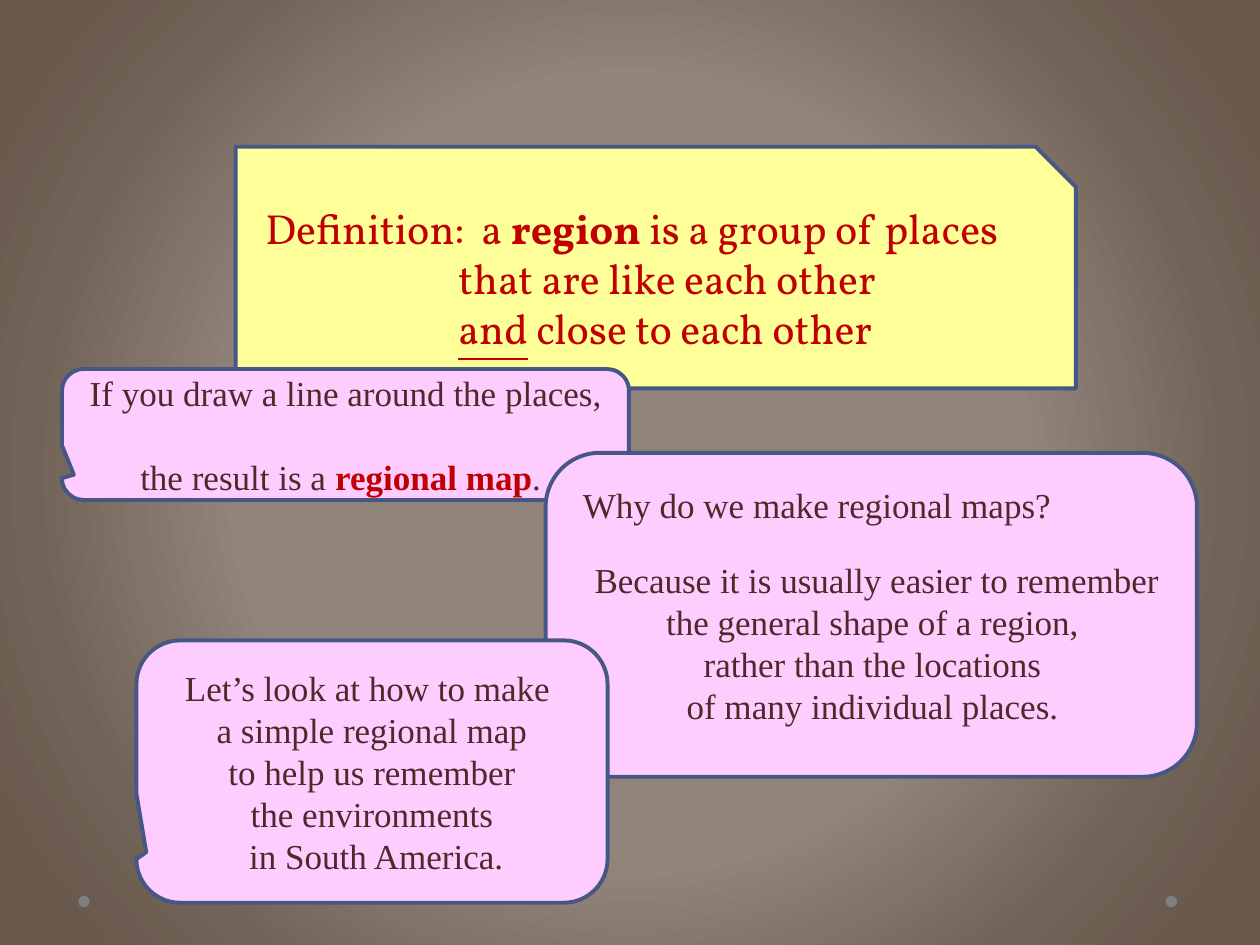
"""Build the slide that defines a region and a regional map."""
from lxml import etree
from pptx import Presentation
from pptx.dml.color import RGBColor
from pptx.enum.shapes import MSO_SHAPE
from pptx.enum.text import MSO_ANCHOR, PP_ALIGN
from pptx.oxml import parse_xml
from pptx.util import Cm, Pt

SNIP, CALLOUT, DOT = (MSO_SHAPE.SNIP_1_RECTANGLE,
                      MSO_SHAPE.ROUNDED_RECTANGULAR_CALLOUT, MSO_SHAPE.OVAL)
LEFT, CENTER = PP_ALIGN.LEFT, PP_ALIGN.CENTER
MIDDLE, TOP = MSO_ANCHOR.MIDDLE, MSO_ANCHOR.TOP
NS = "http://schemas.openxmlformats.org/drawingml/2006/main"

COLORS = {"yellow": "FFFF99", "pink": "FFCCFF", "outline": "475785",
          "red": "C00000", "brown": "4E2929", "dot": "808080"}
BACKDROP = [(50, "91847B"), (76, "726358"), (92, "69584C")]
CALLOUT_ADJUST = (-0.479, 0.307, 0.167)
SERIF = {"name": "Times New Roman", "size": Pt(20), "color": "brown"}
VOLLKORN = {"name": "Vollkorn", "size": Pt(24), "color": "red"}
BOLD, UNDERLINE = {"bold": True}, {"underline": True}
KEY_TERM = {"bold": True, "color": "red"}

DOTS = [(23.5, 18.06), (1.58, 18.06)]
DOT_SIZE = 0.23
BOXES = [
    {"kind": SNIP, "at": (4.75, 2.96, 16.94, 4.87), "fill": "yellow",
     "font": VOLLKORN, "indents": (0.35, 4.24, 4.24),
     "lines": [[("Definition:  a ", {}), ("region ", BOLD),
                ("is a group of places", {})],
               [("that are like each other", {})],
               [("and", UNDERLINE), (" close to each other", {})]]},
    {"at": (1.25, 7.44, 11.43, 2.64), "indents": (0.18, 1.2), "gap": 24,
     "lines": [[("If you draw a line around the places,", {})],
               [("the result is a ", {}), ("regional map", KEY_TERM),
                (".", {})]]},
    {"at": (11, 9.13, 13.13, 6.53), "indents": (0.18,), "anchor": TOP,
     "margin_top": 0.3, "lines": [[("Why do we make regional maps?", {})]]},
    {"at": (11.43, 10.68, 12.5, 4.55), "align": CENTER, "outlined": False,
     "lines": [[("Because it is usually easier to remember", {})],
               [("the general shape of a region, ", {})],
               [("rather than the locations ", {})],
               [("of many individual places. ", {})]]},
    {"at": (2.75, 12.91, 9.5, 5.29), "align": CENTER,
     "lines": [[("Let’s look at how to make ", {})],
               [("a simple regional map", {})],
               [("to help us remember", {})],
               [("the environments", {})],
               [(" in South America.", {})]]},
]


def rgb(name):
    return RGBColor.from_string(COLORS[name])


def paint_background(slide):
    fill = slide.background.fill
    fill.gradient()
    grad = slide.background._cSld.bg.bgPr.find(f"{{{NS}}}gradFill")
    for child in list(grad):
        grad.remove(child)
    stops = "".join(f'<a:gs pos="{pos * 1000}"><a:srgbClr val="{color}"/></a:gs>'
                    for pos, color in BACKDROP)
    grad.append(parse_xml(f'<a:gsLst xmlns:a="{NS}">{stops}</a:gsLst>'))
    circle = etree.SubElement(grad, f"{{{NS}}}path", {"path": "circle"})
    etree.SubElement(circle, f"{{{NS}}}fillToRect", dict.fromkeys("ltrb", "50000"))


def add_shape(slide, kind, at, fill, outlined):
    sp = slide.shapes.add_shape(kind, *map(Cm, at))
    sp.shadow.inherit = False
    sp.fill.solid()
    sp.fill.fore_color.rgb = rgb(fill)
    if outlined:
        sp.line.color.rgb = rgb("outline")
        sp.line.width = Pt(2.25)
    else:
        sp.line.fill.background()
    return sp


def add_run(p, text, formats):
    r = p.add_run()
    r.text = text
    for key, value in formats.items():
        if key == "color":
            r.font.color.rgb = rgb(value)
        else:
            setattr(r.font, key, value)


def add_box(slide, box):
    kind = box.get("kind", CALLOUT)
    sp = add_shape(slide, kind, box["at"], box.get("fill", "pink"),
                   box.get("outlined", True))
    if kind == CALLOUT:
        for i, value in enumerate(CALLOUT_ADJUST):
            sp.adjustments[i] = value
    tf = sp.text_frame
    tf.word_wrap = True
    tf.vertical_anchor = box.get("anchor", MIDDLE)
    tf.margin_top = Cm(box.get("margin_top", 0.13))
    for i, line in enumerate(box["lines"]):
        p = tf.add_paragraph() if i else tf.paragraphs[0]
        p.alignment = box.get("align", LEFT)
        if "indents" in box:
            p._p.get_or_add_pPr().set("marL", str(Cm(box["indents"][i])))
        if i:
            p.space_before = Pt(box.get("gap", 0))
        for text, formats in line:
            add_run(p, text, {**box.get("font", SERIF), **formats})


def main():
    prs = Presentation()
    prs.slide_width, prs.slide_height = Cm(25.4), Cm(19.05)
    slide = prs.slides.add_slide(prs.slide_layouts[6])
    paint_background(slide)
    for left, top in DOTS:
        add_shape(slide, DOT, (left, top, DOT_SIZE, DOT_SIZE), "dot", False)
    for box in BOXES:
        add_box(slide, box)
    prs.save("out.pptx")


if __name__ == "__main__":
    main()
